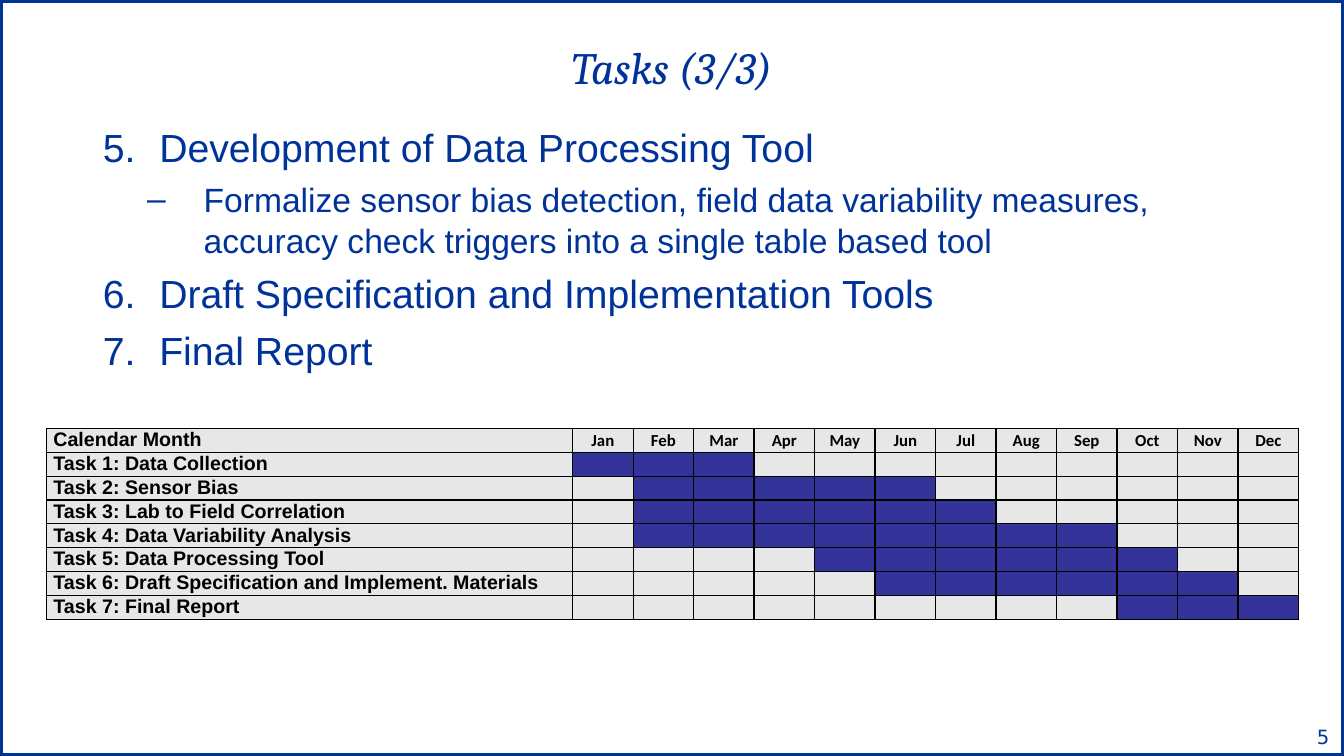
from lxml.etree import SubElement
from pptx import Presentation
from pptx.dml.color import RGBColor
from pptx.enum.shapes import MSO_SHAPE
from pptx.enum.text import MSO_ANCHOR, MSO_AUTO_SIZE, PP_ALIGN
from pptx.oxml.ns import qn
from pptx.util import Inches, Pt

COLORS = {
    "text": "003399",
    "frame": "003594",
    "bar": "333399",
    "cell": "E7E7E7",
    "ink": "000000",
}
SLIDE_W, SLIDE_H = 13.33, 7.5

# Level, text, first number (None for a dash)
OUTLINE = [
    (0, "Development of Data Processing Tool", 5),
    (1, "Formalize sensor bias detection, field data variability measures, "
        "accuracy check triggers into a single table based tool", None),
    (0, "Draft Specification and Implementation Tools", 6),
    (0, "Final Report", 6),
]
# Size, left margin, space before for each level
LEVELS = [(28, 0.56, 7), (24, 1, 6.5)]

MONTHS = "Jan Feb Mar Apr May Jun Jul Aug Sep Oct Nov Dec".split()
# Task, first month, last month
SCHEDULE = [
    ("Task 1: Data Collection", 1, 3),
    ("Task 2: Sensor Bias", 2, 6),
    ("Task 3: Lab to Field Correlation", 2, 7),
    ("Task 4: Data Variability Analysis", 2, 9),
    ("Task 5: Data Processing Tool", 5, 10),
    ("Task 6: Draft Specification and Implement. Materials", 6, 11),
    ("Task 7: Final Report", 10, 12),
]


def rgb(name):
    return RGBColor.from_string(COLORS[name])


def slide_box(left, top, width, height):
    """Turn shares of the slide into lengths."""
    return (Inches(left * SLIDE_W), Inches(top * SLIDE_H),
            Inches(width * SLIDE_W), Inches(height * SLIDE_H))


def place(shape, box):
    shape.left, shape.top, shape.width, shape.height = box


def style(paragraph, face, size, color, bold=False, italic=False):
    for run in paragraph.runs:
        font = run.font
        font.name, font.size = face, Pt(size)
        font.bold, font.italic = bold, italic
        font.color.rgb = rgb(color)


def add_frame(slide, box):
    frame = slide.shapes.add_shape(MSO_SHAPE.RECTANGLE, *box)
    frame.shadow.inherit = False
    frame.fill.background()
    frame.line.color.rgb = rgb("frame")
    frame.line.width = Pt(4.5)


def fill_title(slide, box):
    title = slide.shapes.title
    place(title, box)
    title.text_frame.text = "Tasks (3/3)"
    title.text_frame.vertical_anchor = MSO_ANCHOR.MIDDLE
    heading = title.text_frame.paragraphs[0]
    heading.alignment = PP_ALIGN.CENTER
    style(heading, "Cambria", 32, "text", italic=True)


def fill_outline(slide, box):
    body = slide.placeholders[1]
    place(body, box)
    outline = body.text_frame
    outline.auto_size = MSO_AUTO_SIZE.NONE
    outline.text = "\n".join(text for _, text, _ in OUTLINE)
    for position, (level, _, number) in enumerate(OUTLINE):
        item = outline.paragraphs[position]
        size, margin, gap = LEVELS[level]
        item.level = level
        props = item._p.get_or_add_pPr()
        props.set("marL", str(Inches(margin)))
        props.set("indent", str(Inches(-0.56)))
        if number is None:
            SubElement(props, qn("a:buChar"), char="–")
        else:
            SubElement(props, qn("a:buFont"), typeface="+mj-lt")
            SubElement(props, qn("a:buAutoNum"), type="arabicPeriod", startAt=str(number))
        item.space_before = Pt(gap if position else 0)
        style(item, "Arial", size, "text")


def add_borders(cell):
    props = cell._tc.get_or_add_tcPr()
    for side in ("lnL", "lnR", "lnT", "lnB"):
        line = SubElement(props, qn(f"a:{side}"), w=str(Pt(1)))
        SubElement(SubElement(line, qn("a:solidFill")), qn("a:srgbClr"), val=COLORS["ink"])


def format_cell(cell, fill):
    add_borders(cell)
    cell.fill.solid()
    cell.fill.fore_color.rgb = rgb(fill)
    cell.margin_left = cell.margin_right = Inches(0.07)
    cell.margin_top = cell.margin_bottom = 0
    cell.vertical_anchor = MSO_ANCHOR.MIDDLE


def write_cell(cell, text, face, size, alignment):
    cell.text_frame.text = text
    label = cell.text_frame.paragraphs[0]
    label.alignment = alignment
    label.line_spacing = Pt(15)
    style(label, face, size, "ink", bold=True)


def add_schedule(slide, box):
    left, top, width, height = box
    row_count, column_count = len(SCHEDULE) + 1, len(MONTHS) + 1
    schedule = slide.shapes.add_table(row_count, column_count, *box).table
    schedule.first_row = schedule.horz_banding = False

    # Task column takes what the equal month columns leave
    month_width = Inches(0.6)
    for column in schedule.columns:
        column.width = month_width
    schedule.columns[0].width = width - len(MONTHS) * month_width
    for row in schedule.rows:
        row.height = height // row_count

    # Header and task labels
    labels = ["Calendar Month"] + [task for task, _, _ in SCHEDULE]
    for row, label in enumerate(labels):
        write_cell(schedule.cell(row, 0), label, "Arial", 14, PP_ALIGN.LEFT)
    for column, month in enumerate(MONTHS, 1):
        write_cell(schedule.cell(0, column), month, "Calibri", 12, PP_ALIGN.CENTER)

    # Bars: months in which a task runs
    spans = [(0, -1)] + [(first, last) for _, first, last in SCHEDULE]
    for row, (first, last) in enumerate(spans):
        for column in range(column_count):
            cell = schedule.cell(row, column)
            format_cell(cell, "bar" if first <= column <= last else "cell")
            if not cell.text_frame.text:
                # Small empty lines keep the rows low
                SubElement(cell.text_frame.paragraphs[0]._p, qn("a:endParaRPr"), sz="1000")


def add_page_number(slide, box):
    number = slide.shapes.add_textbox(*box).text_frame
    number.word_wrap = True
    number.text = "5"
    number.paragraphs[0].alignment = PP_ALIGN.RIGHT
    style(number.paragraphs[0], "DejaVu Sans", 14, "frame")


def main():
    deck = Presentation()
    deck.slide_width, deck.slide_height = Inches(SLIDE_W), Inches(SLIDE_H)
    slide = deck.slides.add_slide(deck.slide_layouts[1])
    add_frame(slide, slide_box(0, 0, 1, 1))
    fill_title(slide, slide_box(0.075, 0.033, 0.85, 0.111))
    fill_outline(slide, slide_box(0.069, 0.156, 0.85, 0.733))
    add_schedule(slide, slide_box(0.0345, 0.567, 0.9317, 0.252))
    add_page_number(slide, slide_box(0.788, 0.952, 0.2085, 0.044))
    deck.save("out.pptx")


if __name__ == "__main__":
    main()
